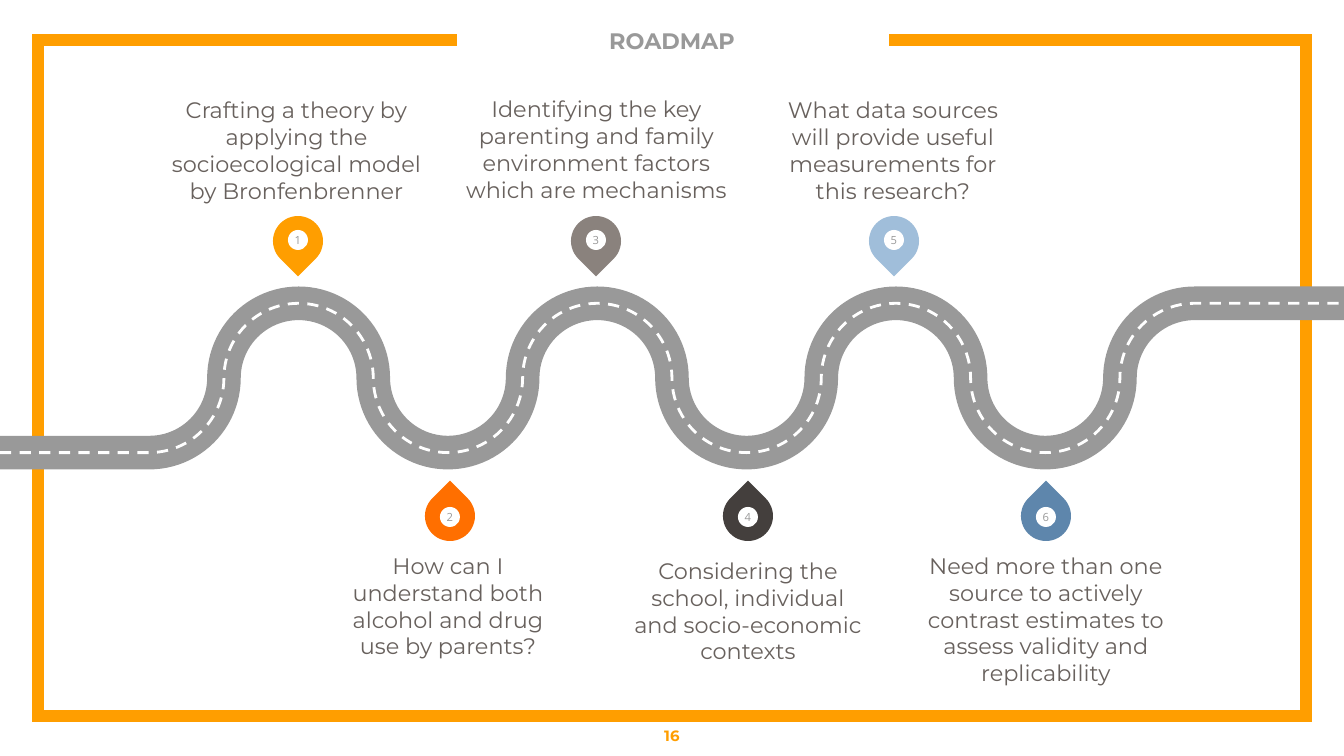
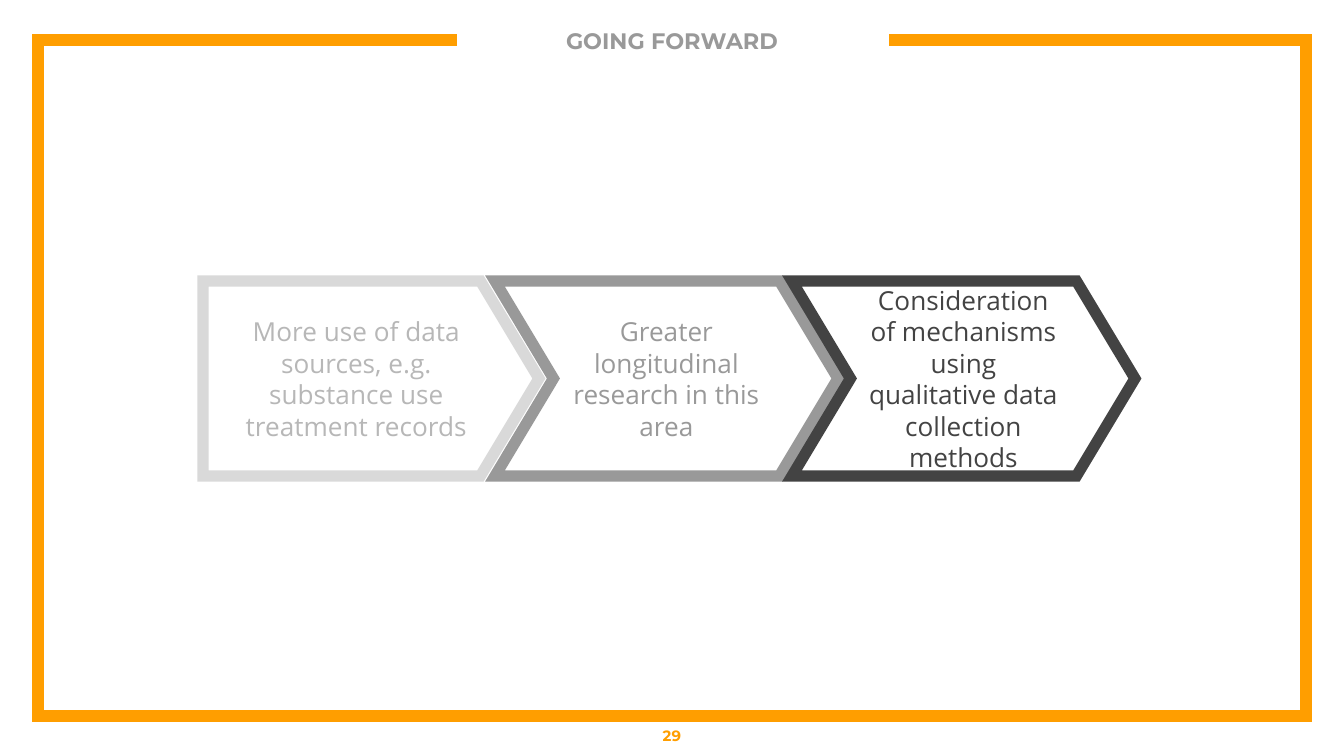
from lxml import etree
from pptx import Presentation
from pptx import util as u
from pptx.dml.color import RGBColor
from pptx.enum import dml, shapes, text
from pptx.oxml.ns import qn

COLORS = {
    "orange": "FF9E00", "deep_orange": "FF6F00", "taupe": "8A827D", "coal": "443F3D",
    "sky": "A0BEDA", "steel": "5E86AC", "gray": "999999", "white": "FFFFFF",
    "body": "68615D", "pale": "D9D9D9", "silver": "B7B7B7", "dark": "434343",
}
HEAD_FONT, BODY_FONT = "Montserrat", "Open Sans"
WIDTH, HEIGHT = 1344, 756
PX = 9144000 / WIDTH

FRAME = [(457, 40), (38, 40), (38, 716), (1306, 716), (1306, 40), (889, 40)]

ROADMAP = {
    "title": "ROADMAP",
    "page": "16",
    # pin colour, text, text box left, top, width; odd stops sit above the road
    "stops": [
        ("orange", "Crafting a theory by applying the socioecological model by Bronfenbrenner",
         169, 126, 255),
        ("deep_orange", "How can I understand both alcohol and drug use by parents?",
         333, 552, 230),
        ("taupe", "Identifying the key parenting and family environment factors "
         "which are mechanisms", 460, 125, 273),
        ("coal", "Considering the school, individual and socio-economic contexts",
         633, 557, 230),
        ("sky", "What data sources will provide useful measurements for this research?",
         770, 126, 246),
        ("steel", "Need more than one source to actively contrast estimates to assess "
         "validity and replicability", 927, 552, 238),
    ],
}
FORWARD = {
    "title": "GOING FORWARD",
    "page": "29",
    # outline colour, text colour, text
    "steps": [
        ("pale", "silver", "More use of data sources, e.g. substance use treatment records"),
        ("gray", "gray", "Greater longitudinal research in this area"),
        ("dark", "dark", "Consideration of mechanisms using qualitative data collection methods"),
    ],
}


def px(n):
    return u.Emu(round(n * PX))


def rgb(name):
    return RGBColor.from_string(COLORS[name])


def write(sp, content, size, color, font, bold=False, inset=0, anchor="MIDDLE"):
    tf = sp.text_frame
    tf.word_wrap = True
    tf.vertical_anchor = text.MSO_ANCHOR[anchor]
    tf.margin_left = tf.margin_right = tf.margin_top = tf.margin_bottom = u.Inches(inset)
    p = tf.paragraphs[0]
    p.text = content
    p.alignment = text.PP_ALIGN.CENTER
    p.font.size, p.font.name, p.font.bold = u.Pt(size), font, bold
    p.font.color.rgb = rgb(color)


def add_text(s, box, *args, **kwargs):
    write(s.shapes.add_textbox(*map(px, box)), *args, **kwargs)


def outline(sp, color, width, dash=None):
    """Unfilled shape with a sharp-cornered line."""
    sp.shadow.inherit = False
    sp.fill.background()
    sp.line.color.rgb = rgb(color)
    sp.line.width = u.Pt(width)
    if dash:
        sp.line.dash_style = dash
    ln = sp._element.spPr.find(qn("a:ln"))
    etree.SubElement(ln, qn("a:miter")).set("lim", "800000")


def add_filled(parent, kind, box, color):
    sp = parent.shapes.add_shape(kind, *map(px, box))
    sp.shadow.inherit = False
    sp.fill.solid()
    sp.fill.fore_color.rgb = rgb(color)
    sp.line.fill.background()
    return sp


def add_path(s, points):
    points = [(px(x), px(y)) for x, y in points]
    builder = s.shapes.build_freeform(*points[0])
    builder.add_line_segments(points[1:], close=False)
    return builder.convert_to_shape()


def add_road(s):
    """Two straight ends joined by 14 quarter circles."""
    radius, middle, quarters = WIDTH / 18, HEIGHT / 2, 14
    low, high = middle + radius, middle - radius
    points = [(0, low)]
    points += [(radius * (2 + i), (low, middle, high, middle)[i % 4])
               for i in range(quarters + 1)]
    points.append((WIDTH, high))
    turns = [(90, -90), (180, 90), (270, 90), (180, -90)]
    for color, width, dash in (("gray", 18, None), ("white", 1.5, dml.MSO_LINE.DASH)):
        sp = add_path(s, points)
        outline(sp, color, width, dash)
        segments = list(sp._element.iter(qn("a:lnTo")))[1:-1]
        for i, segment in enumerate(segments):
            start, sweep = turns[i % 4]
            arc = etree.Element(qn("a:arcTo"))
            for key, value in (("wR", px(radius)), ("hR", px(radius)),
                               ("stAng", start * 60000), ("swAng", sweep * 60000)):
                arc.set(key, str(int(value)))
            segment.getparent().replace(segment, arc)


def add_pin(s, number, color, above):
    pin, dot, gap = 50, 20, 298
    center = (298 if above else 450) + (number - 1) // 2 * gap
    pin_top, dot_top, turn = (216, 230, 135) if above else (491, 507, 315)
    group = s.shapes.add_group_shape()
    drop = add_filled(group, shapes.MSO_SHAPE.TEAR,
                      (center - pin / 2, pin_top, pin, pin), color)
    drop.rotation = turn
    badge = add_filled(group, shapes.MSO_SHAPE.OVAL,
                       (center - dot / 2, dot_top, dot, dot), "white")
    write(badge, str(number), 6, "gray", BODY_FONT)


def add_slide(prs, content):
    s = prs.slides.add_slide(prs.slide_layouts[6])
    outline(add_path(s, FRAME), "orange", 6)
    add_text(s, (477, 15, 390, 52), content["title"], 12, "gray", HEAD_FONT, bold=True)
    add_text(s, (0, 716, WIDTH, 40), content["page"], 8, "orange", HEAD_FONT,
             bold=True, inset=0.1)
    return s


def build_roadmap(prs):
    s = add_slide(prs, ROADMAP)
    add_road(s)
    for number, (color, label, left, top, width) in enumerate(ROADMAP["stops"], 1):
        above = number % 2 == 1
        add_pin(s, number, color, above)
        add_text(s, (left, top, width, 78), label, 12, "body", HEAD_FONT,
                 anchor="BOTTOM" if above else "TOP")


def build_forward(prs):
    s = add_slide(prs, FORWARD)
    top, height, step = 281, 195, 297
    for i, (line, color, label) in enumerate(FORWARD["steps"]):
        if i == 0:
            kind, left, width = shapes.MSO_SHAPE.PENTAGON, 203, 336
        else:
            kind, left, width = shapes.MSO_SHAPE.CHEVRON, 198 + i * step, 343
        sp = s.shapes.add_shape(kind, px(left), px(top), px(width), px(height))
        sp.adjustments[0] = 0.3
        outline(sp, line, 6)
        write(sp, label, 14, color, BODY_FONT, inset=0.1)


def main():
    prs = Presentation()
    prs.slide_width, prs.slide_height = px(WIDTH), px(HEIGHT)
    build_roadmap(prs)
    build_forward(prs)
    prs.save("out.pptx")


if __name__ == "__main__":
    main()
